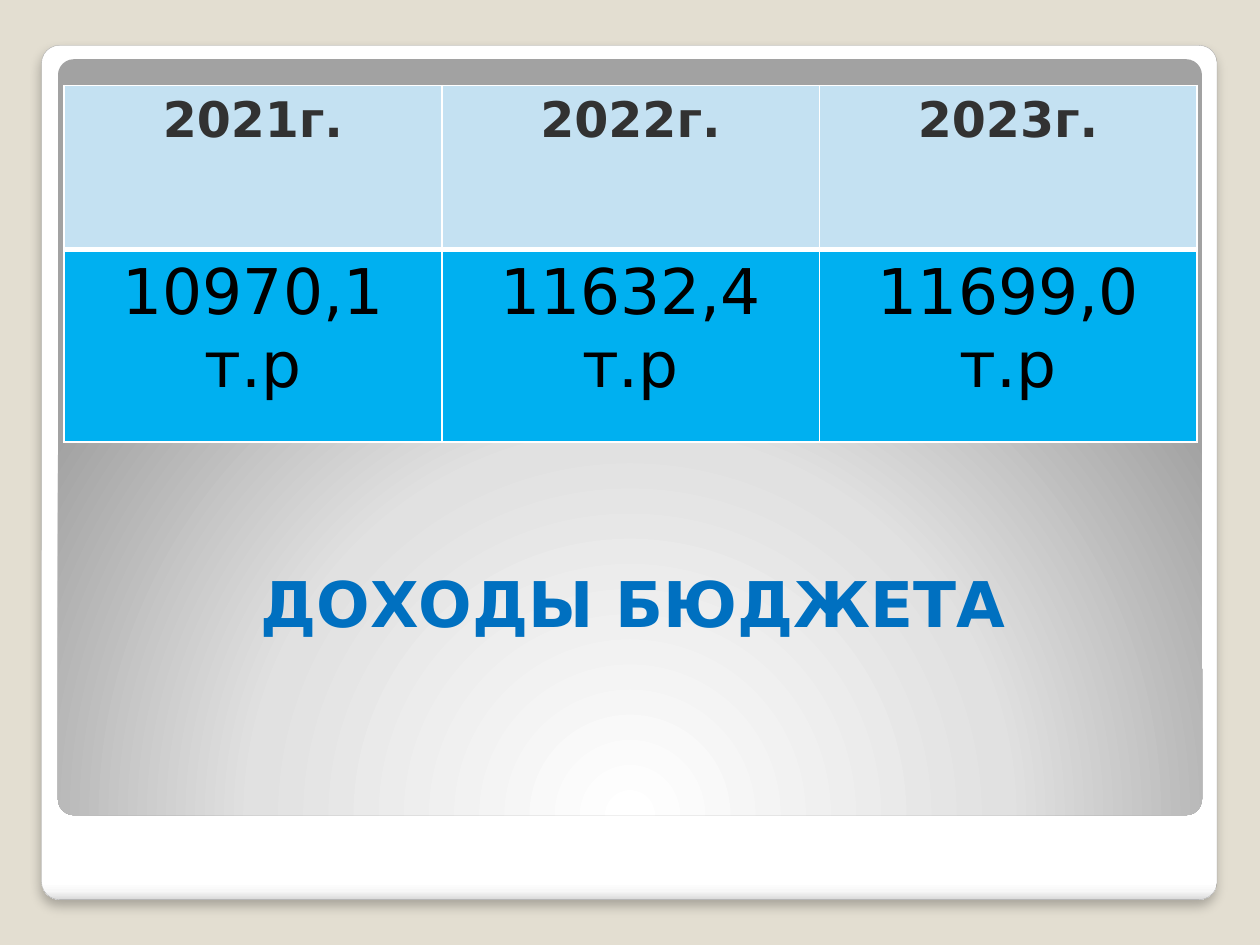
from lxml import etree
from pptx import Presentation
from pptx.dml.color import RGBColor
from pptx.enum.shapes import MSO_SHAPE
from pptx.enum.text import MSO_ANCHOR, PP_ALIGN
from pptx.oxml import parse_xml
from pptx.oxml.ns import nsdecls, qn
from pptx.util import Inches, Pt

FONT = "DejaVu Sans"
WHITE = "FFFFFF"
YEARS = ["2021г.", "2022г.", "2023г."]
INCOMES = ["10970,1 т.р", "11632,4 т.р", "11699,0 т.р"]
HEADER_RULE, THIN_RULE = 3, 1


def color(hex_value):
    return RGBColor.from_string(hex_value)


def write_text(frame, text, size, hex_color, bold=False, anchor=MSO_ANCHOR.TOP):
    frame.word_wrap = True
    frame.vertical_anchor = anchor
    paragraph = frame.paragraphs[0]
    paragraph.alignment = PP_ALIGN.CENTER
    run = paragraph.add_run()
    run.text = text
    run.font.name = FONT
    run.font.size = Pt(size)
    run.font.bold = bold
    run.font.color.rgb = color(hex_color)


def add_gradient_panel(slide, box, stops, direction):
    """Add a rounded panel; direction is the XML that steers its gradient."""
    panel = slide.shapes.add_shape(MSO_SHAPE.ROUNDED_RECTANGLE, *map(Inches, box))
    panel.adjustments[0] = 0.021
    panel.shadow.inherit = False
    panel.line.fill.background()
    panel.fill.background()
    stop_xml = "".join(
        f'<a:gs pos="{share * 1000}"><a:srgbClr val="{value}"/></a:gs>'
        for share, value in stops)
    properties = panel._element.spPr
    properties.replace(properties.find(qn("a:noFill")), parse_xml(
        f'<a:gradFill {nsdecls("a")} rotWithShape="1">'
        f"<a:gsLst>{stop_xml}</a:gsLst>{direction}</a:gradFill>"))
    return panel


def add_card(slide, box):
    card = add_gradient_panel(
        slide, box, [(0, WHITE), (98, WHITE), (99, "F7F7F7"), (100, "DADADA")],
        '<a:lin ang="5400000" scaled="0"/>')
    card.line.color.rgb = color("A4A4A4")
    card.line.width = Pt(0.16)
    effects = card._element.spPr.find(qn("a:effectLst"))
    effects.append(parse_xml(
        f'<a:outerShdw {nsdecls("a")} blurRad="{Pt(6)}" dist="{Pt(4)}" dir="5400000" '
        'algn="tl" rotWithShape="0"><a:srgbClr val="000000">'
        '<a:alpha val="25000"/></a:srgbClr></a:outerShdw>'))


def add_backdrop(slide, box):
    add_gradient_panel(
        slide, box, [(0, WHITE), (55, "E1E1E1"), (100, "A2A2A2")],
        '<a:path path="circle"><a:fillToRect l="50000" t="175000" '
        'r="50000" b="-75000"/></a:path>')


def add_title(slide, box, text):
    title = slide.shapes.add_textbox(*map(Inches, box))
    write_text(title.text_frame, text, 36, "0070C0", bold=True, anchor=MSO_ANCHOR.MIDDLE)


def set_borders(cell, top, bottom):
    properties = cell._tc.get_or_add_tcPr()
    widths = {"lnL": THIN_RULE, "lnR": THIN_RULE, "lnT": top, "lnB": bottom}
    for position, (tag, width) in enumerate(widths.items()):
        border = etree.Element(qn(f"a:{tag}"), w=str(Pt(width)))
        solid = etree.SubElement(border, qn("a:solidFill"))
        etree.SubElement(solid, qn("a:srgbClr"), val=WHITE)
        properties.insert(position, border)


def add_income_table(slide, box, row_heights):
    table = slide.shapes.add_table(2, len(YEARS), *map(Inches, box)).table
    for row, height in zip(table.rows, row_heights):
        row.height = Inches(height)
    header = dict(size=28, hex_color="323232", bold=True)
    body = dict(size=36, hex_color="000000")
    rows = [(YEARS, "C4E1F2", header, THIN_RULE, HEADER_RULE),
            (INCOMES, "00B0F0", body, HEADER_RULE, THIN_RULE)]
    for row, (texts, fill, style, top, bottom) in enumerate(rows):
        for column, text in enumerate(texts):
            cell = table.cell(row, column)
            cell.fill.solid()
            cell.fill.fore_color.rgb = color(fill)
            write_text(cell.text_frame, text, **style)
            set_borders(cell, top, bottom)


def main():
    deck = Presentation()
    deck.slide_width, deck.slide_height = Inches(10), Inches(7.5)
    slide = deck.slides.add_slide(deck.slide_layouts[6])
    slide.background.fill.solid()
    slide.background.fill.fore_color.rgb = color("E3DED1")
    add_card(slide, (0.33, 0.36, 9.33, 6.78))
    add_backdrop(slide, (0.46, 0.47, 9.08, 6))
    add_title(slide, (0.55, 2.96, 8.95, 3.64), "ДОХОДЫ БЮДЖЕТА")
    add_income_table(slide, (0.51, 0.68, 8.99, 2.83), (1.3, 1.53))
    deck.save("out.pptx")


if __name__ == "__main__":
    main()
